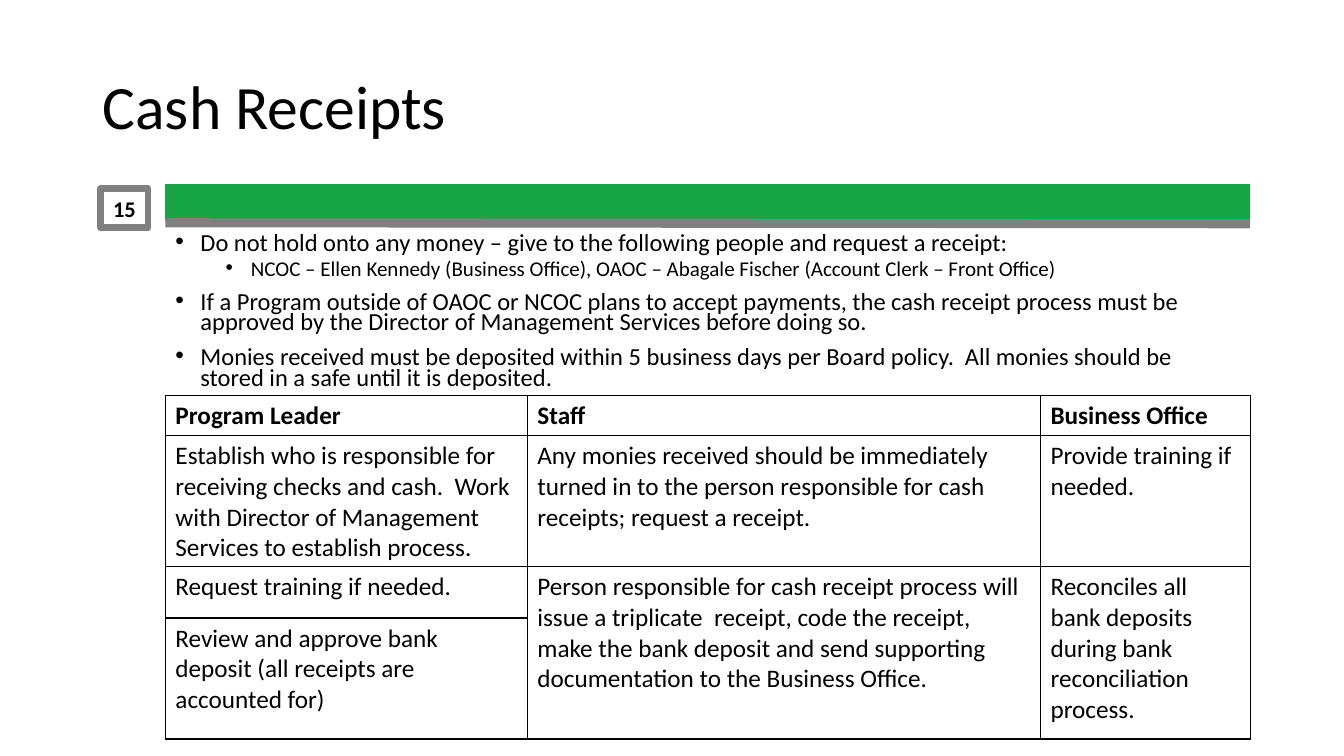
"""Build the Cash Receipts slide with its policy bullets and duty table."""
from dataclasses import dataclass

from lxml import etree
from pptx import Presentation
from pptx.dml.color import RGBColor
from pptx.enum.shapes import MSO_CONNECTOR, MSO_SHAPE
from pptx.enum.text import MSO_ANCHOR, PP_ALIGN
from pptx.oxml.ns import qn
from pptx.slide import Slide
from pptx.table import _Cell
from pptx.text.text import _Paragraph
from pptx.util import Inches, Pt

STRAIGHT = MSO_CONNECTOR.STRAIGHT
RECTANGLE = MSO_SHAPE.RECTANGLE
MIDDLE = MSO_ANCHOR.MIDDLE
TOP = MSO_ANCHOR.TOP
CENTER = PP_ALIGN.CENTER

BLACK = RGBColor(0x00, 0x00, 0x00)
GREEN = RGBColor(0x17, 0xA5, 0x43)
GRAY = RGBColor(0x80, 0x80, 0x80)
FONT = "Calibri"
LEFT = 1.64
RIGHT = 12.4


@dataclass(frozen=True)
class Bullet:
    text: str
    level: int = 0


@dataclass(frozen=True)
class Rule:
    start_y: float
    end_y: float
    color: RGBColor
    weight: float


@dataclass(frozen=True)
class BulletStyle:
    size: float
    space_before: float
    margin: float


BULLET_STYLES = [BulletStyle(17.5, 10, 0.25), BulletStyle(15, 5, 0.75)]
POLICIES = [
    Bullet("Do not hold onto any money – give to the following people and request a receipt:"),
    Bullet("NCOC – Ellen Kennedy (Business Office), OAOC – Abagale Fischer "
           "(Account Clerk – Front Office)", 1),
    Bullet("If a Program outside of OAOC or NCOC plans to accept payments, the cash receipt "
           "process must be approved by the Director of Management Services before doing so."),
    Bullet("Monies received must be deposited within 5 business days per Board policy.  "
           "All monies should be stored in a safe until it is deposited."),
]
GREEN_BAR = Rule(2.01, 2.01, GREEN, 26.25)
GRAY_BAR = Rule(2.21, 2.22, GRAY, 6.5)

COLUMN_WIDTHS = [3.59, 5.09, 2.08]
ROW_HEIGHTS = [0.36, 1.17, 0.51, 1.2]
DUTIES = [
    ["Program Leader", "Staff", "Business Office"],
    ["Establish who is responsible for receiving checks and cash.  Work with Director of "
     "Management Services to establish process.",
     "Any monies received should be immediately turned in to the person responsible for "
     "cash receipts; request a receipt.",
     "Provide training if needed."],
    ["Request training if needed.",
     "Person responsible for cash receipt process will issue a triplicate  receipt, code the "
     "receipt, make the bank deposit and send supporting documentation to the Business Office.",
     "Reconciles all bank deposits during bank reconciliation process."],
    ["Review and approve bank deposit (all receipts are accounted for)", "", ""],
]


def style_runs(paragraph: _Paragraph, size: float, bold: bool = False) -> None:
    """Apply the slide font to every run of a paragraph."""
    for run in paragraph.runs:
        run.font.name = FONT
        run.font.size = Pt(size)
        run.font.bold = bold
        run.font.color.rgb = BLACK


def add_title(slide: Slide) -> None:
    """Add the slide title."""
    title = slide.shapes.add_textbox(Inches(0.92), Inches(0.36), Inches(11.5), Inches(1.45))
    frame = title.text_frame
    frame.word_wrap = True
    frame.vertical_anchor = MIDDLE
    frame.text = "Cash Receipts"
    heading = frame.paragraphs[0]
    heading.line_spacing = 0.9
    style_runs(heading, 44)


def add_policies(slide: Slide) -> None:
    """Add the bulleted policies."""
    body = slide.shapes.add_textbox(Inches(LEFT), Inches(2.28), Inches(10.77), Inches(1.76))
    frame = body.text_frame
    frame.word_wrap = True
    frame.vertical_anchor = TOP
    frame.text = "\n".join(policy.text for policy in POLICIES)
    for policy, paragraph in zip(POLICIES, frame.paragraphs):
        style = BULLET_STYLES[policy.level]
        paragraph.level = policy.level
        paragraph.line_spacing = 0.7
        paragraph.space_before = Pt(style.space_before)
        style_runs(paragraph, style.size)
        properties = paragraph._p.get_or_add_pPr()
        properties.set("marL", str(Inches(style.margin)))
        properties.set("indent", str(Inches(-0.25)))
        etree.SubElement(properties, qn("a:buFont"), typeface="Arial")
        etree.SubElement(properties, qn("a:buChar"), char="•")


def add_rule(slide: Slide, rule: Rule) -> None:
    """Add a thick line across the content width."""
    bar = slide.shapes.add_connector(
        STRAIGHT, Inches(LEFT), Inches(rule.start_y), Inches(RIGHT), Inches(rule.end_y))
    bar.line.color.rgb = rule.color
    bar.line.width = Pt(rule.weight)
    etree.SubElement(bar._element.spPr, qn("a:effectLst"))


def add_page_number(slide: Slide) -> None:
    """Add the framed page number."""
    badge = slide.shapes.add_shape(RECTANGLE, Inches(1), Inches(1.87), Inches(0.47), Inches(0.39))
    badge.shadow.inherit = False
    badge.fill.background()
    badge.line.color.rgb = GRAY
    badge.line.width = Pt(4.75)
    etree.SubElement(badge.line._get_or_add_ln(), qn("a:round"))
    frame = badge.text_frame
    frame.margin_left = frame.margin_right = Inches(0)
    frame.margin_top = frame.margin_bottom = Inches(0)
    frame.vertical_anchor = MIDDLE
    frame.text = "15"
    number = frame.paragraphs[0]
    number.alignment = CENTER
    style_runs(number, 16, True)


def style_cell(cell: _Cell) -> None:
    """Clear the fill of a cell and outline its four sides."""
    properties = cell._tc.get_or_add_tcPr()
    for side in ("a:lnL", "a:lnR", "a:lnT", "a:lnB"):
        border = etree.SubElement(properties, qn(side), w=str(Pt(1)))
        fill = etree.SubElement(border, qn("a:solidFill"))
        etree.SubElement(fill, qn("a:srgbClr"), val=str(BLACK))
    cell.fill.background()


def add_duties(slide: Slide) -> None:
    """Add the table of duties by role."""
    duties = slide.shapes.add_table(
        len(ROW_HEIGHTS), len(COLUMN_WIDTHS), Inches(LEFT), Inches(3.92),
        Inches(sum(COLUMN_WIDTHS)), Inches(sum(ROW_HEIGHTS))).table
    duties.first_row = False
    duties.horz_banding = False
    for column, width in zip(duties.columns, COLUMN_WIDTHS):
        column.width = Inches(width)
    for row, height in zip(duties.rows, ROW_HEIGHTS):
        row.height = Inches(height)
    for row_index, texts in enumerate(DUTIES):
        for column_index, text in enumerate(texts):
            cell = duties.cell(row_index, column_index)
            style_cell(cell)
            cell.text = text
            style_runs(cell.text_frame.paragraphs[0], 18, row_index == 0)
    for column_index in (1, 2):
        duties.cell(2, column_index).merge(duties.cell(3, column_index))


def main() -> None:
    """Assemble and save the slide."""
    presentation = Presentation()
    presentation.slide_width = Inches(13.33)
    presentation.slide_height = Inches(7.5)
    slide = presentation.slides.add_slide(presentation.slide_layouts[6])
    add_title(slide)
    add_policies(slide)
    add_rule(slide, GREEN_BAR)
    add_page_number(slide)
    add_rule(slide, GRAY_BAR)
    add_duties(slide)
    presentation.save("out.pptx")


if __name__ == "__main__":
    main()
